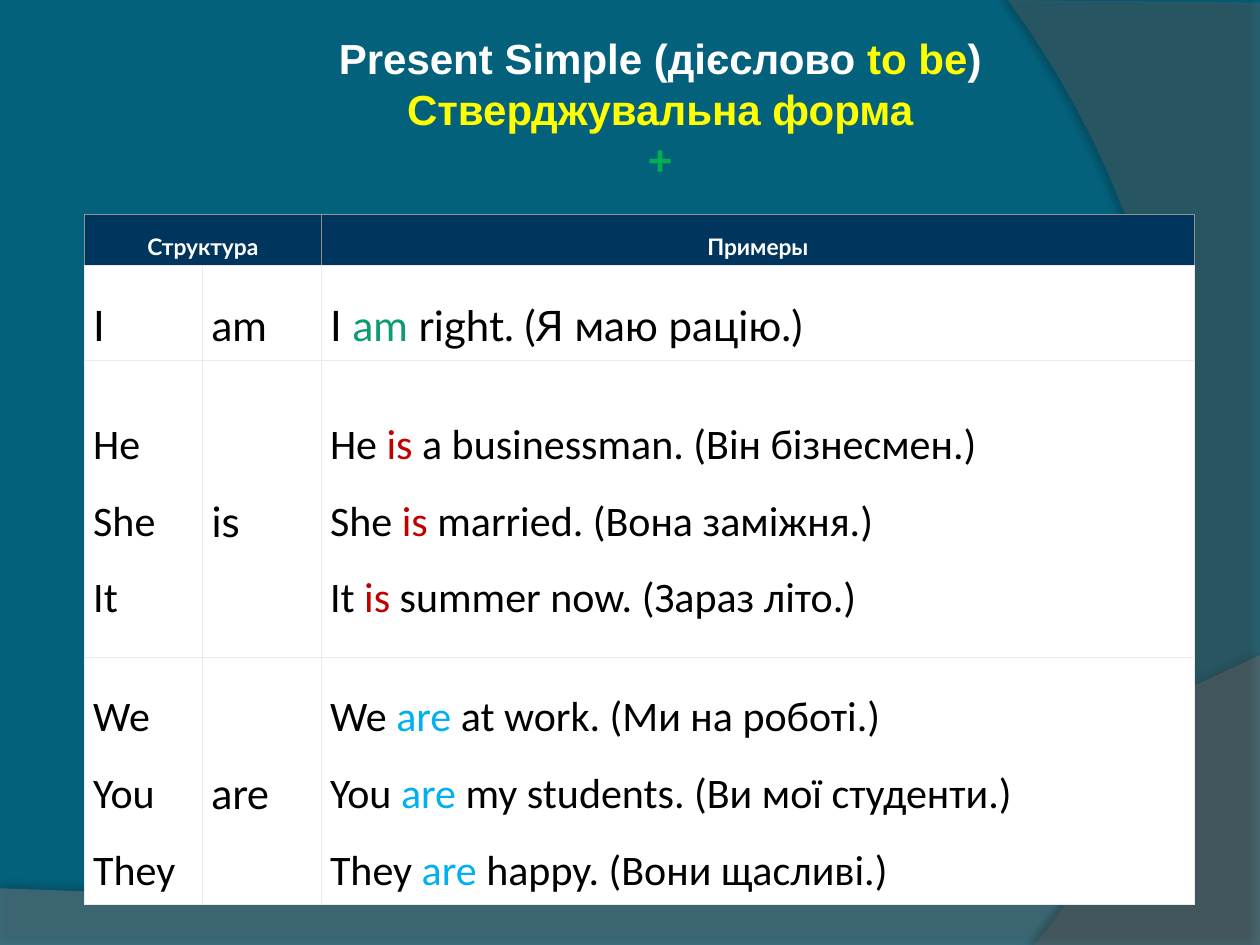
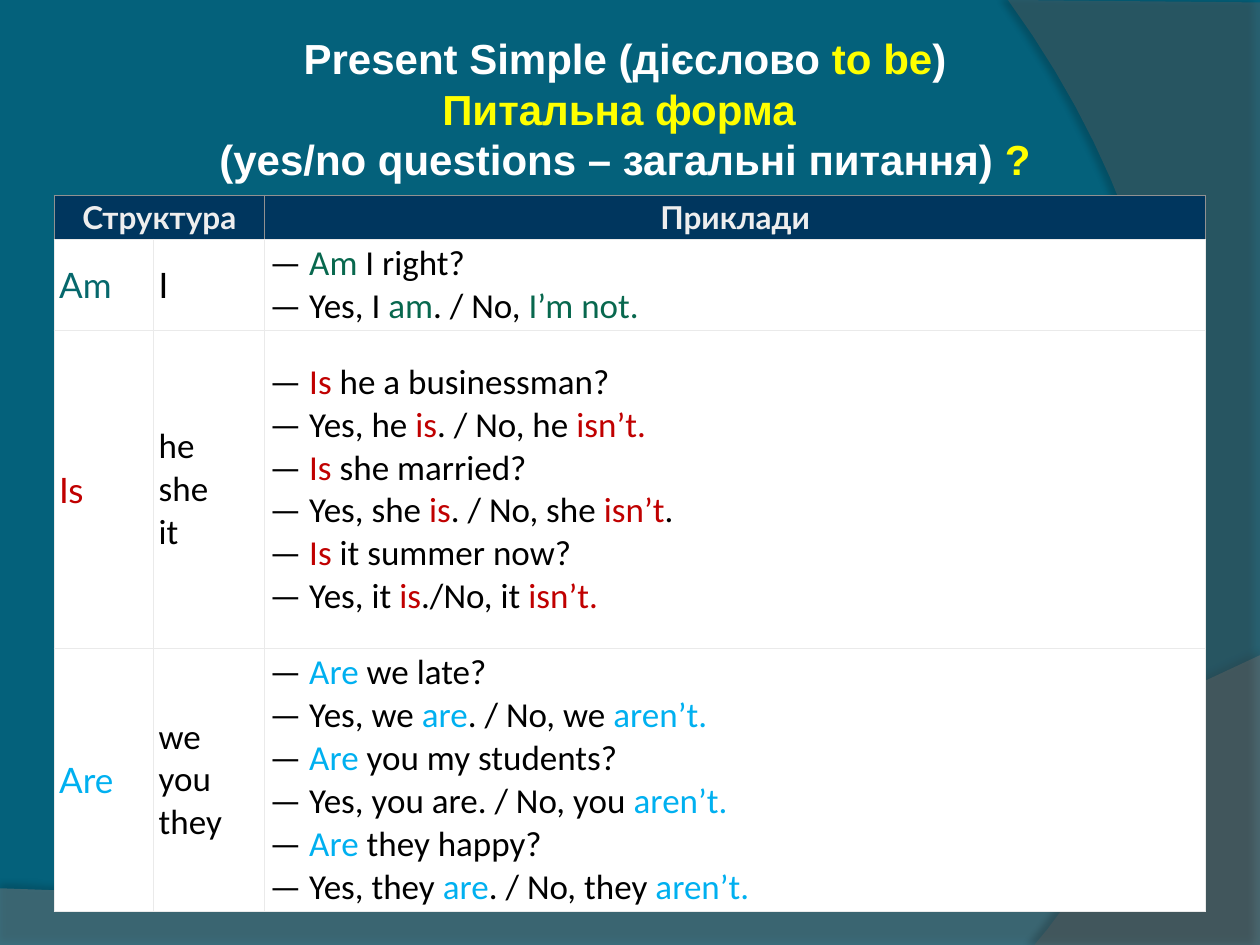
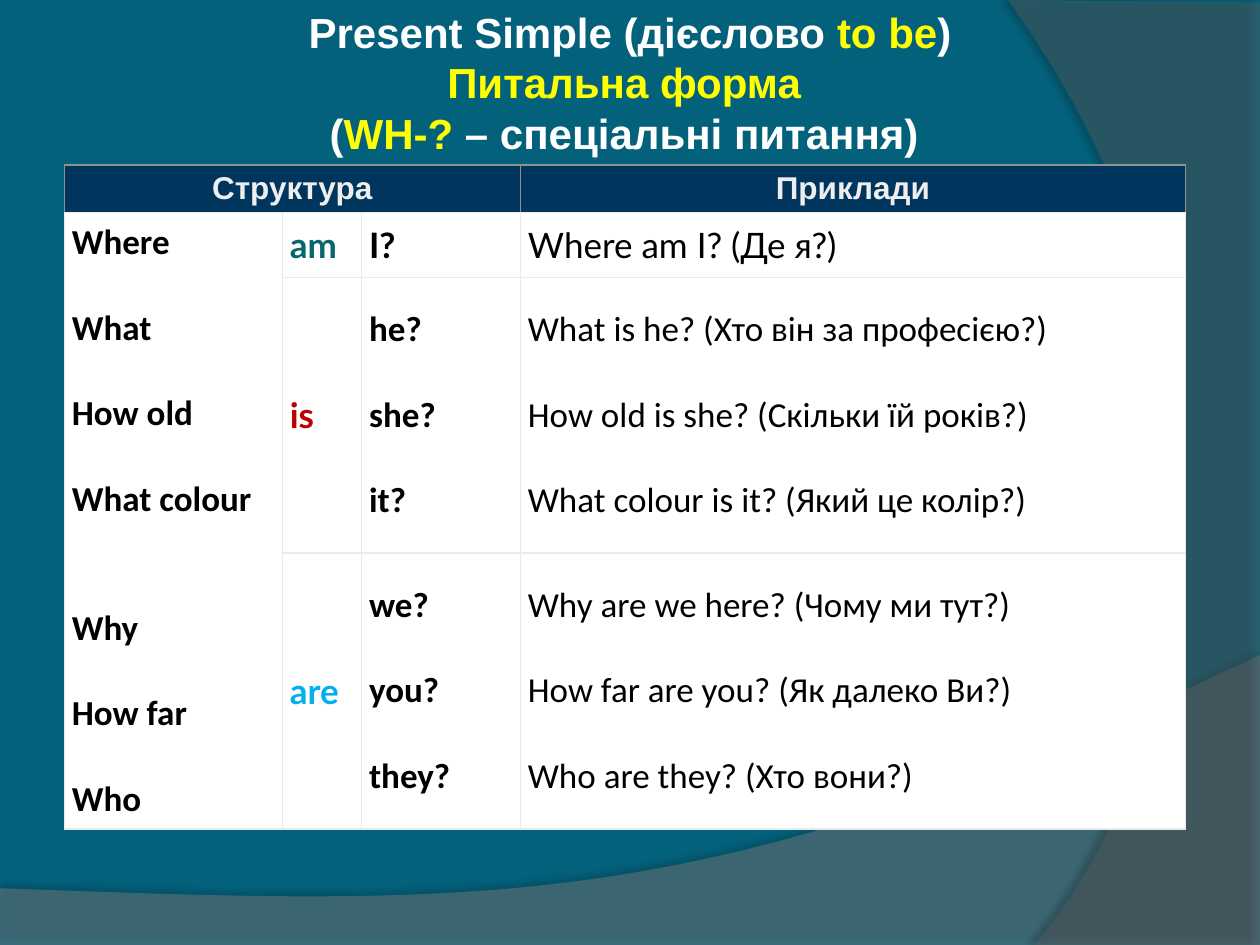
from dataclasses import dataclass
from typing import Optional

from lxml import etree
from pptx import Presentation
from pptx.dml.color import RGBColor
from pptx.enum.text import MSO_ANCHOR, MSO_AUTO_SIZE, PP_ALIGN
from pptx.oxml.ns import qn
from pptx.util import Emu, Inches, Pt

MIDDLE, TOP = MSO_ANCHOR.MIDDLE, MSO_ANCHOR.TOP
CENTER, LEFT = PP_ALIGN.CENTER, PP_ALIGN.LEFT
NO_AUTOFIT = MSO_AUTO_SIZE.NONE

SLIDE_W, SLIDE_H = Inches(10), Inches(7.5)
COLUMN, ROW = SLIDE_W / 100, SLIDE_H / 75

TEAL = RGBColor(0x04, 0x61, 0x7B)
NAVY = RGBColor(0x00, 0x36, 0x5E)
WHITE = RGBColor(0xFF, 0xFF, 0xFF)
PALE = RGBColor(0xEE, 0xEE, 0xEE)
BLACK = RGBColor(0x00, 0x00, 0x00)
YELLOW = RGBColor(0xFF, 0xFF, 0x00)
PLUS_GREEN = RGBColor(0x00, 0xB0, 0x50)
AM_LIGHT = RGBColor(0x0C, 0x9B, 0x74)
AM_DARK = RGBColor(0x08, 0x68, 0x4E)
AM_TEAL = RGBColor(0x06, 0x68, 0x6C)
IS_RED = RGBColor(0xC0, 0x00, 0x00)
ARE_BLUE = RGBColor(0x00, 0xB0, 0xF0)
WAVE_GREY = RGBColor(0x7F, 0x7F, 0x7F)
ARC_GREY = RGBColor(0x5E, 0x5E, 0x5E)
GRID_LIGHT = RGBColor(0xEA, 0xEA, 0xEA)
GRID_DARK = RGBColor(0x91, 0x91, 0x91)

ARIAL, CALIBRI, LATO = "Arial", "Calibri", "Lato"
TITLE_SIZE = 24
BLANK_LINE = 24.5
CURVE_STEPS = 32

Point = tuple[float, float]


@dataclass(frozen=True)
class Band:
    start: Point
    sides: list[tuple[Point, ...]]
    color: RGBColor
    opacity: int
    shadow_opacity: int
    shadow_distance: float
    shadow_angle: int


@dataclass(frozen=True)
class Cell:
    lines: tuple[str, ...] = ()
    font: str = CALIBRI
    color: RGBColor = BLACK
    accent: RGBColor = BLACK
    bold: bool = False
    wide_gap_at: int = -1


@dataclass(frozen=True)
class Lesson:
    title_area: tuple[float, float, float, float]
    title: list[tuple[str, RGBColor]]
    corner: Point
    columns: list[float]
    rows: list[float]
    margins: Point
    cells: list[list[Cell]]
    merges: list[tuple[int, int, int, int]]
    header_size: int
    body_size: int
    line_spacing: float = 1.0
    gap: float = 0


BANDS = [
    Band((0, 70.5),
         [((0, 75.1),), ((100, 75.1),), ((100, 52),), ((55.9, 72.9), (39.1, 71.9), (0, 70.5))],
         WAVE_GREY, 45, 35, 3.5, 270),
    Band((100, 0.2),
         [((100, 75),), ((82.1, 75),), ((93.5, 61.9), (101.8, 30), (80, 0))],
         ARC_GREY, 40, 45, 4, 180),
]


def header(text: str, font: str = LATO, color: RGBColor = PALE) -> Cell:
    return Cell((text,), font, color, bold=True)


def verb(text: str, color: RGBColor, bold: bool = False) -> Cell:
    return Cell((text,), LATO, color, bold=bold)


def bold_lines(*lines: str, font: str = CALIBRI, wide_gap_at: int = -1) -> Cell:
    return Cell(lines, font, bold=True, wide_gap_at=wide_gap_at)


HEADING = ("Present Simple (дієслово *to be*)", YELLOW)

LESSONS = [
    Lesson(
        title_area=(20.1, 2.1, 64.6, 13.1),
        title=[HEADING, ("*Стверджувальна форма*", YELLOW), ("*+*", PLUS_GREEN)],
        corner=(6.7, 17), columns=[9.4, 9.4, 69.3], rows=[4.1, 7.5, 23.6, 19.6],
        margins=(0.7, 0.4),
        cells=[
            [header("Структура", color=WHITE), Cell(), header("Примеры", color=WHITE)],
            [Cell(("I",), LATO), verb("am", BLACK),
             Cell(("I *am* right. (Я маю рацію.)",), LATO, accent=AM_LIGHT)],
            [Cell(("He", "She", "It")), verb("is", BLACK),
             Cell(("He *is* a businessman. (Він бізнесмен.)",
                   "She *is* married. (Вона заміжня.)",
                   "It *is *summer now. (Зараз літо.)"), accent=IS_RED)],
            [Cell(("We", "You", "They")), verb("are", BLACK),
             Cell(("We *are* at work. (Ми на роботі.)",
                   "You *are* my students. (Ви мої студенти.)",
                   "They *are* happy. (Вони щасливі.)"), accent=ARE_BLUE)],
        ],
        merges=[(0, 0, 0, 1)], header_size=13, body_size=24, line_spacing=1.5),
    Lesson(
        title_area=(13, 2.1, 73.2, 13.1),
        title=[HEADING,
               ("*Питальна форма \n*(yes/no questions – загальні питання) *?*", YELLOW)],
        corner=(4.3, 15.5), columns=[7.9, 8.8, 74.7], rows=[3.5, 7.1, 25.3, 20.5],
        margins=(0.4, 0.2),
        cells=[
            [header("Структура"), Cell(), header("Приклади")],
            [verb("Am", AM_TEAL), Cell(("I",), LATO),
             Cell(("— *Am* I right?", "— Yes, I *am*. / No, *I’m not.*"), accent=AM_DARK)],
            [verb("Is", IS_RED), Cell(("he", "she", "it")),
             Cell(("— *Is* he a businessman?",
                   "— Yes, he *is*. / No, he *isn’t.*",
                   "—* Is *she married?",
                   "— Yes, she *is*. / No, she *isn’t*.",
                   "— *Is *it summer now?",
                   "— Yes, it *is*./No, it *isn’t.*"), accent=IS_RED)],
            [verb("Are", ARE_BLUE), Cell(("we", "you", "they")),
             Cell(("— *Are* we late?",
                   "— Yes, we *are*. / No, we *aren’t.*",
                   "— *Are* you my students?",
                   "— Yes, you are. / No, you *aren’t.*",
                   "— *Are* they happy?",
                   "— Yes, they *are*. / No, they *aren’t.*"), accent=ARE_BLUE)],
        ],
        merges=[(0, 0, 0, 1)], header_size=18, body_size=20),
    Lesson(
        title_area=(12.2, 0, 75.6, 13.1),
        title=[HEADING, ("*Питальна форма \n*(*WH-?* – спеціальні питання) ", YELLOW)],
        corner=(5.1, 13.1), columns=[17.3, 6.3, 12.6, 52.8], rows=[3.8, 5.1, 21.9, 21.9],
        margins=(0.6, 0.4),
        cells=[
            [header("Структура", ARIAL), Cell(), Cell(), header("Приклади", ARIAL)],
            [bold_lines("Where", "What", "How old", "What colour", "Why", "How far", "Who",
                        wide_gap_at=4),
             verb("am", AM_TEAL, True), bold_lines("I?", font=LATO),
             Cell(("Where am I? (Де я?)",), LATO)],
            [Cell(), verb("is", IS_RED, True), bold_lines("he?", "she?", "it?"),
             Cell(("What is he? (Хто він за професією?)",
                   "How old is she? (Скільки їй років?)",
                   "What colour is it? (Який це колір?)"))],
            [Cell(), verb("are", ARE_BLUE, True), bold_lines("we?", "you?", "they?"),
             Cell(("Why are we here? (Чому ми тут?)",
                   "How far are you? (Як далеко Ви?)",
                   "Who are they? (Хто вони?)"))],
        ],
        merges=[(0, 0, 0, 2), (1, 0, 3, 0)], header_size=18, body_size=20, gap=BLANK_LINE),
]


def across(columns: float) -> Emu:
    return Emu(round(columns * COLUMN))


def down(rows: float) -> Emu:
    return Emu(round(rows * ROW))


def curve(start: Point, first: Point, second: Point, end: Point) -> list[Point]:
    points = []
    for step in range(1, CURVE_STEPS + 1):
        t = step / CURVE_STEPS
        weights = ((1 - t) ** 3, 3 * t * (1 - t) ** 2, 3 * t * t * (1 - t), t ** 3)
        corners = (start, first, second, end)
        points.append((sum(w * c[0] for w, c in zip(weights, corners)),
                       sum(w * c[1] for w, c in zip(weights, corners))))
    return points


def draw_band(slide, band: Band):
    outline = [band.start]
    for side in band.sides:
        outline += curve(outline[-1], *side) if len(side) == 3 else side
    places = [(across(x), down(y)) for x, y in outline]
    builder = slide.shapes.build_freeform(*places[0], scale=1.0)
    builder.add_line_segments(places[1:], close=True)
    shape = builder.convert_to_shape()
    shape.fill.solid()
    shape.fill.fore_color.rgb = band.color
    shape.line.fill.background()
    shape.shadow.inherit = False
    properties = shape.element.spPr
    fill_color = properties.find(qn("a:solidFill"))[0]
    etree.SubElement(fill_color, qn("a:alpha"), val=str(band.opacity * 1000))
    shadow = etree.SubElement(
        properties.find(qn("a:effectLst")), qn("a:outerShdw"), blurRad=str(Pt(4)),
        dist=str(Pt(band.shadow_distance)), dir=str(band.shadow_angle * 60000),
        algn="ctr", rotWithShape="0")
    shadow_color = etree.SubElement(shadow, qn("a:srgbClr"), val=str(BLACK))
    etree.SubElement(shadow_color, qn("a:alpha"), val=str(band.shadow_opacity * 1000))
    return shape


def move_bands_to_master(slide, master) -> None:
    for place, band in enumerate(BANDS, start=2):
        master.shapes.element.insert(place, draw_band(slide, band).element)


def write_line(paragraph, text: str, accent: RGBColor, font: str, size: int,
               color: RGBColor, bold: bool) -> None:
    paragraph.font.name = font
    paragraph.font.size = Pt(size)
    paragraph.font.bold = bold
    paragraph.font.color.rgb = color
    for index, part in enumerate(text.split("*")):
        for row, piece in enumerate(part.split("\n")):
            if row:
                paragraph.add_line_break()
            if piece:
                run = paragraph.add_run()
                run.text = piece
                if index % 2:
                    run.font.color.rgb = accent


def next_paragraph(frame, index: int):
    return frame.add_paragraph() if index else frame.paragraphs[0]


def draw_title(slide, lesson: Lesson) -> None:
    title = slide.shapes.title
    left, top, width, height = lesson.title_area
    title.left, title.top = across(left), down(top)
    title.width, title.height = across(width), down(height)
    frame = title.text_frame
    frame.word_wrap = True
    frame.auto_size = NO_AUTOFIT
    frame.vertical_anchor = TOP
    for index, (text, accent) in enumerate(lesson.title):
        paragraph = next_paragraph(frame, index)
        paragraph.alignment = CENTER
        write_line(paragraph, text, accent, ARIAL, TITLE_SIZE, WHITE, True)


def draw_borders(table_cell, is_header: bool) -> None:
    properties = table_cell._tc.get_or_add_tcPr()
    for side in ("lnL", "lnR", "lnT", "lnB"):
        color = GRID_DARK if is_header and side != "lnB" else GRID_LIGHT
        line = etree.SubElement(properties, qn(f"a:{side}"), w=str(Pt(0.75)))
        fill = etree.SubElement(line, qn("a:solidFill"))
        etree.SubElement(fill, qn("a:srgbClr"), val=str(color))


def fill_cell(table_cell, cell: Cell, lesson: Lesson, is_header: bool) -> None:
    draw_borders(table_cell, is_header)
    table_cell.fill.solid()
    table_cell.fill.fore_color.rgb = NAVY if is_header else WHITE
    table_cell.vertical_anchor = MIDDLE
    side, edge = lesson.margins
    table_cell.margin_left = table_cell.margin_right = across(side)
    table_cell.margin_top = table_cell.margin_bottom = down(edge)
    size = lesson.header_size if is_header else lesson.body_size
    for index, text in enumerate(cell.lines):
        paragraph = next_paragraph(table_cell.text_frame, index)
        paragraph.alignment = CENTER if is_header else LEFT
        paragraph.line_spacing = lesson.line_spacing
        if index and lesson.gap:
            paragraph.space_before = Pt(lesson.gap * (2 if index == cell.wide_gap_at else 1))
        write_line(paragraph, text, cell.accent, cell.font, size, cell.color, cell.bold)


def draw_table(slide, lesson: Lesson) -> None:
    left, top = lesson.corner
    table = slide.shapes.add_table(
        len(lesson.rows), len(lesson.columns), across(left), down(top),
        across(sum(lesson.columns)), down(sum(lesson.rows))).table
    table.first_row = table.horz_banding = False
    for column, width in zip(table.columns, lesson.columns):
        column.width = across(width)
    for row, height in zip(table.rows, lesson.rows):
        row.height = down(height)
    for first_row, first_column, last_row, last_column in lesson.merges:
        table.cell(first_row, first_column).merge(table.cell(last_row, last_column))
    for row, cells in enumerate(lesson.cells):
        for column, cell in enumerate(cells):
            fill_cell(table.cell(row, column), cell, lesson, row == 0)


def find_layout(presentation, name: str) -> Optional[object]:
    return presentation.slide_layouts.get_by_name(name)


def main() -> None:
    presentation = Presentation()
    presentation.slide_width, presentation.slide_height = SLIDE_W, SLIDE_H
    master = presentation.slide_master
    master.background.fill.solid()
    master.background.fill.fore_color.rgb = TEAL
    title_only = find_layout(presentation, "Title Only")
    for lesson in LESSONS:
        slide = presentation.slides.add_slide(title_only)
        if lesson is LESSONS[0]:
            move_bands_to_master(slide, master)
        draw_title(slide, lesson)
        draw_table(slide, lesson)
    presentation.save("out.pptx")


if __name__ == "__main__":
    main()
